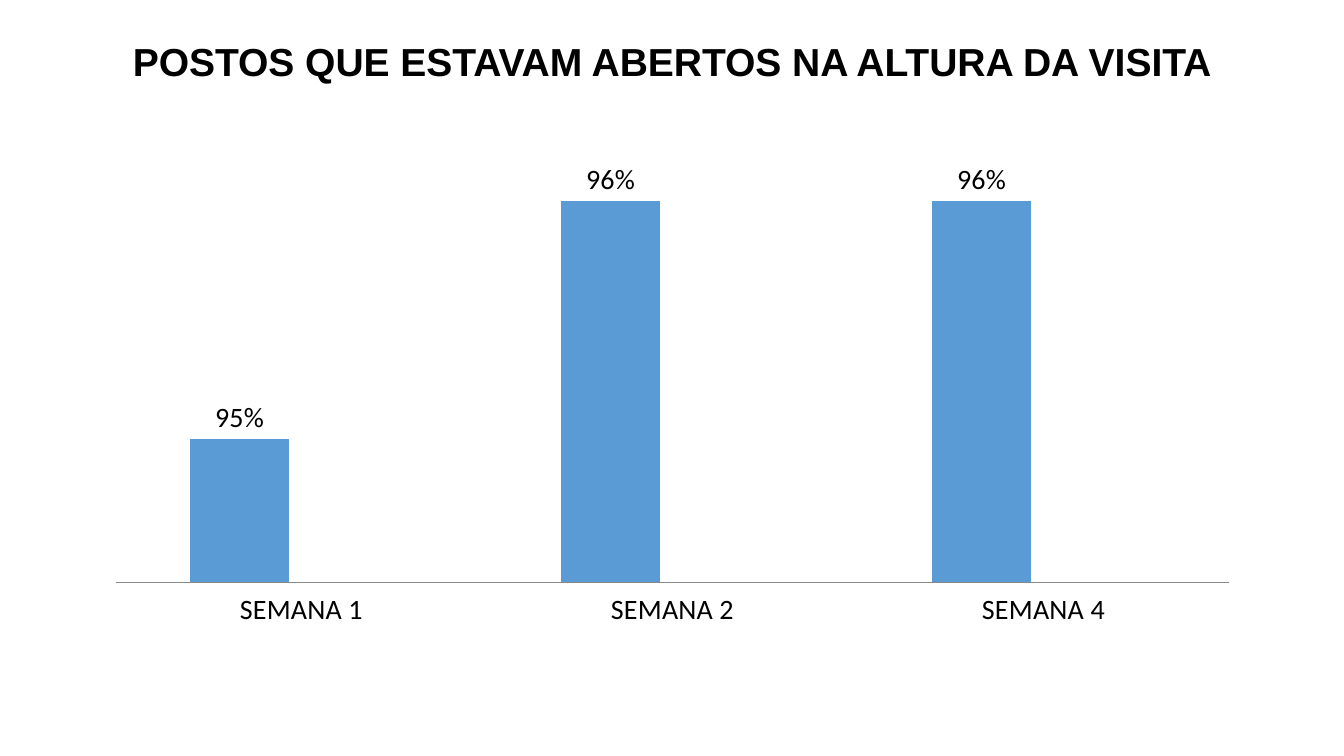
from lxml import etree
from pptx import Presentation
from pptx.chart.data import CategoryChartData
from pptx.dml.color import RGBColor
from pptx.enum.chart import XL_CHART_TYPE, XL_LABEL_POSITION, XL_TICK_LABEL_POSITION, XL_TICK_MARK
from pptx.enum.text import MSO_ANCHOR, PP_ALIGN
from pptx.oxml import parse_xml
from pptx.oxml.ns import nsdecls
from pptx.util import Inches, Pt

# Content
TITLE = "POSTOS QUE ESTAVAM ABERTOS NA ALTURA DA VISITA"
WEEKS = ["SEMANA 1", "SEMANA 2", "SEMANA 4"]
SERIES = [
    ("Series 1", [0.95, 0.96, 0.96], "blue"),
    ("Series 2", [None, None, None], "orange"),
]
COLORS = {"text": "000000", "blue": "5B9BD5", "orange": "ED7D31", "axis": "898989"}
LEFT, WIDTH = Inches(0.92), Inches(11.5)
PLOT_AREA = {"x": 0.02, "y": 0.02, "w": 0.96, "h": 0.88}


def color(name):
    return RGBColor.from_string(COLORS[name])


def style_font(font, name, size, bold=False):
    font.name = name
    font.size = Pt(size)
    font.bold = bold
    font.color.rgb = color("text")


presentation = Presentation()
presentation.slide_width, presentation.slide_height = Inches(13.33), Inches(7.5)
slide = presentation.slides.add_slide(presentation.slide_layouts[6])

# Title
text_frame = slide.shapes.add_textbox(LEFT, Inches(0.23), WIDTH, Inches(0.66)).text_frame
text_frame.word_wrap = True
text_frame.vertical_anchor = MSO_ANCHOR.MIDDLE
text_frame.margin_top, text_frame.margin_bottom = Inches(0.15), 0
text_frame.text = TITLE
paragraph = text_frame.paragraphs[0]
paragraph.alignment = PP_ALIGN.CENTER
paragraph.line_spacing = 0.9
style_font(paragraph.runs[0].font, "Arial", 27.9, bold=True)

# Column chart
chart_data = CategoryChartData(number_format="0%")
chart_data.categories = WEEKS
for name, values, _ in SERIES:
    chart_data.add_series(name, values)
chart = slide.shapes.add_chart(
    XL_CHART_TYPE.COLUMN_CLUSTERED, LEFT, Inches(1.42), WIDTH, Inches(4.84), chart_data
).chart
chart.has_legend = False
chart.has_title = False
style_font(chart.font, "Calibri", 10)

# Columns and their labels
plot = chart.plots[0]
plot.gap_width, plot.overlap = 150, -25
plot.vary_by_categories = False
for series, (_, _, fill_name) in zip(plot.series, SERIES):
    series.format.fill.solid()
    series.format.fill.fore_color.rgb = color(fill_name)
    labels = series.data_labels
    labels.show_value = True
    labels.number_format, labels.number_format_is_linked = "0%", False
    labels.position = XL_LABEL_POSITION.OUTSIDE_END
    style_font(labels.font, "Calibri", 20)

# Axes
category_axis = chart.category_axis
category_axis.major_tick_mark = XL_TICK_MARK.NONE
category_axis.tick_label_position = XL_TICK_LABEL_POSITION.LOW
category_axis.format.line.color.rgb = color("axis")
category_axis.format.line.width = Pt(0.75)
style_font(category_axis.tick_labels.font, "Calibri", 20)
value_axis = chart.value_axis
value_axis.visible = False
value_axis.has_major_gridlines = False
value_axis.minimum_scale, value_axis.maximum_scale = 0.944, 0.962
value_axis.tick_labels.number_format = "0%"
value_axis.tick_labels.number_format_is_linked = False

# Fixed inner plot area
plot_area = chart.element.chart.plotArea
for old_layout in plot_area.findall("{*}layout"):
    plot_area.remove(old_layout)
layout = parse_xml(f"<c:layout {nsdecls('c')}><c:manualLayout/></c:layout>")
namespace = etree.QName(layout).namespace
settings = {"layoutTarget": "inner", "xMode": "edge", "yMode": "edge", **PLOT_AREA}
for tag, value in settings.items():
    etree.SubElement(layout[0], f"{{{namespace}}}{tag}", val=str(value))
plot_area.insert(0, layout)

presentation.save("out.pptx")
